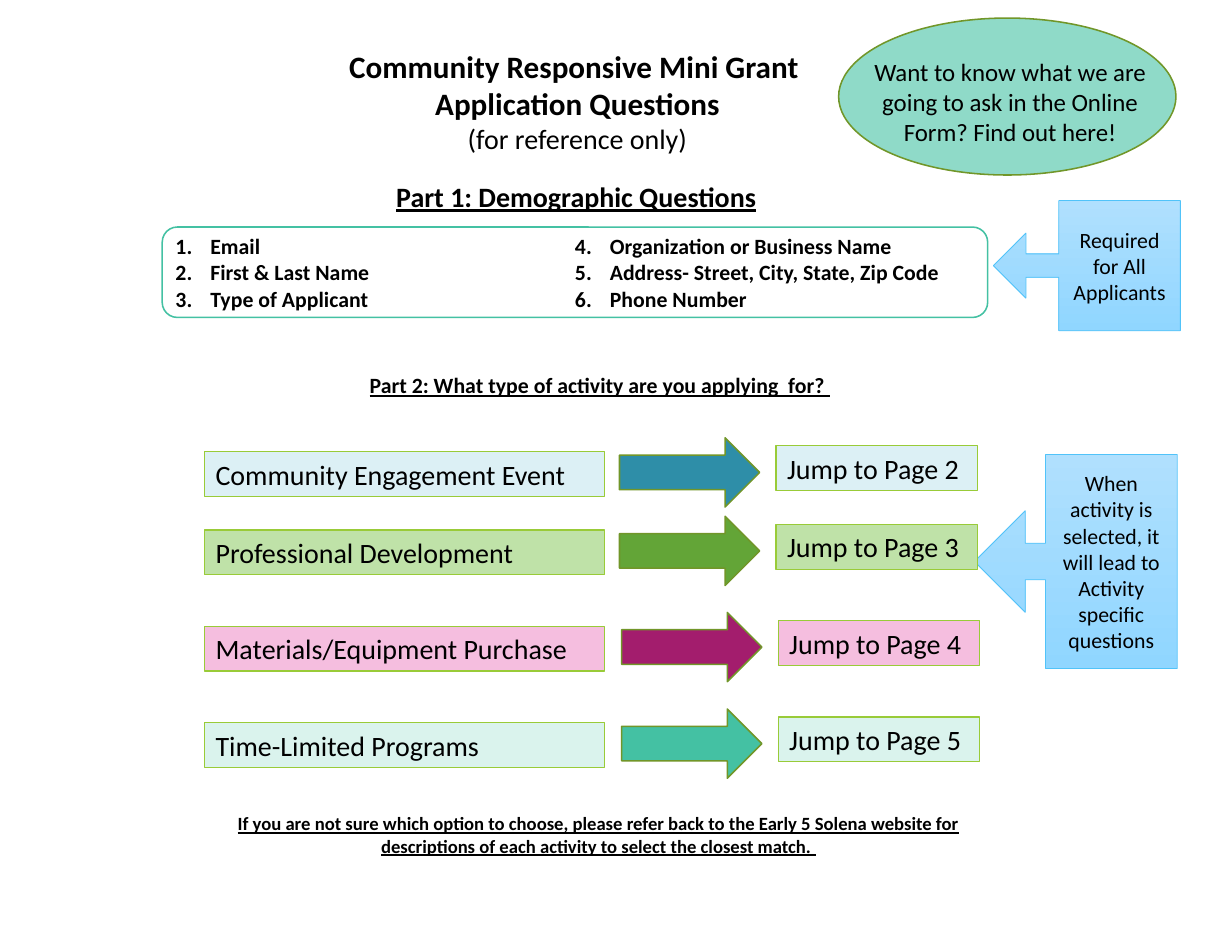
from lxml import etree
from pptx import Presentation
from pptx.dml.color import RGBColor
from pptx.enum import shapes, text
from pptx.oxml.ns import qn
from pptx.util import Cm, Pt

KIND = shapes.MSO_SHAPE
LEFT, CENTER = text.PP_ALIGN.LEFT, text.PP_ALIGN.CENTER
TOP, MIDDLE = text.MSO_ANCHOR.TOP, text.MSO_ANCHOR.MIDDLE

# Content: (text, font format) for each line
TITLE = [
    ("Community Responsive Mini Grant ", dict(size=Pt(20), bold=True)),
    ("Application Questions", dict(size=Pt(20), bold=True)),
    ("(for reference only)", dict(size=Pt(18), bold=False)),
]
QUESTIONS = [
    "Email", "First & Last Name", "Type of Applicant",
    "Organization or Business Name",
    "Address- Street, City, State, Zip Code", "Phone Number",
]
# Headings: text, size, (left, top, width, height) in cm
HEADINGS = [
    ("Part 1: Demographic Questions", 18, (8.64, 3.94, 8.86, 1.02)),
    ("Part 2: What type of activity are you applying  for? ", 14,
     (4.65, 8.31, 17.91, 0.86)),
    ("If you are not sure which option to choose, please refer back to the "
     "Early 5 Solena website for descriptions of each activity to select "
     "the closest match. ", 12, (4.62, 18.29, 17.91, 1.27)),
]
CALLOUTS = [
    ("When activity is selected, it will lead to Activity specific questions",
     (22.1, 10.31, 4.6, 4.85)),
    ("Required for All Applicants", (22.53, 4.55, 4.24, 2.95)),
]
INVITATION = ("Want to know what we are going to ask in the Online Form? "
              "Find out here!")
# Activities: name, pale box colour, arrow colour, row top, row shift in cm
ACTIVITIES = [
    ("Community Engagement Event", "DCF0F5", "2E8EA8", 9.93, 0),
    ("Professional Development", "BFE2A8", "63A537", 11.71, 0),
    ("Materials/Equipment Purchase", "F5BEDF", "A31D6D", 13.89, 0.05),
    ("Time-Limited Programs", "DAF3ED", "44C1A3", 16.08, 0.05),
]


def colour(value):
    return RGBColor.from_string(value)


def place(item, area):
    for name, value in zip(("left", "top", "width", "height"), area):
        setattr(item, name, Cm(value))


def write(item, lines, align=CENTER, anchor=TOP):
    """Fill a shape with (text, font format) lines."""
    frame = item.text_frame
    frame.word_wrap = True
    frame.auto_size = text.MSO_AUTO_SIZE.NONE
    frame.vertical_anchor = anchor
    for number, (words, style) in enumerate(lines):
        para = frame.add_paragraph() if number else frame.paragraphs[0]
        para.alignment = align
        para.space_before = Pt(0)
        span = para.add_run()
        span.text = words
        span.font.color.rgb = colour("000000")
        for name, value in {"name": "Calibri", **style}.items():
            setattr(span.font, name, value)


def draw(page, kind, area, fill, line, weight=1):
    box = page.shapes.add_shape(kind, *map(Cm, area))
    box.shadow.inherit = False
    if fill:
        box.fill.solid()
        box.fill.fore_color.rgb = colour(fill)
    else:
        box.fill.background()
    box.line.color.rgb = colour(line)
    box.line.width = Pt(weight)
    return box


def number_list(body):
    """Two columns of numbered paragraphs."""
    frame = body.text_frame
    frame.margin_left = frame.margin_right = Cm(0.3)
    frame.margin_top = frame.margin_bottom = Cm(0.08)
    columns = frame.paragraphs[0]._p.getparent().find(qn("a:bodyPr"))
    columns.set("numCol", "2")
    for para in frame.paragraphs:
        props = para._p.get_or_add_pPr()
        props.set("marL", str(Cm(0.79)))
        props.set("indent", str(Cm(-0.79)))
        etree.SubElement(props, qn("a:buFont"), typeface="+mj-lt")
        etree.SubElement(props, qn("a:buAutoNum"), type="arabicPeriod")


def main():
    deck = Presentation()
    deck.slide_width, deck.slide_height = Cm(27.94), Cm(21.59)
    page = deck.slides.add_slide(deck.slide_layouts[1])
    title, body = page.placeholders

    # Title and demographic questions
    place(title, (6.81, 0.94, 12.57, 2.74))
    write(title, TITLE)
    question_area = (3.68, 5.15, 18.72, 2.05)
    draw(page, KIND.ROUNDED_RECTANGLE, question_area, None, "44C1A3")
    place(body, question_area)
    write(body, [(words, dict(size=Pt(14), bold=True)) for words in QUESTIONS],
          LEFT, MIDDLE)
    number_list(body)

    # Underlined headings and closing note
    for words, size, area in HEADINGS:
        box = page.shapes.add_textbox(*map(Cm, area))
        write(box, [(words, dict(size=Pt(size), bold=True, underline=True))])

    # Arrow callouts on the right
    for words, area in CALLOUTS:
        box = draw(page, KIND.LEFT_ARROW_CALLOUT, area, None, "51C3F9", 0.5)
        for index, value in enumerate((0.18, 0.25, 0.25, 0.65)):
            box.adjustments[index] = value
        box.fill.gradient()
        box.fill.gradient_angle = 270
        for stop, shade in zip(box.fill.gradient_stops, ("B0E0FE", "90D6FF")):
            stop.color.rgb = colour(shade)
        write(box, [(words, dict(size=Pt(14)))], anchor=MIDDLE)

    # Activity rows: name, arrow, page to jump to
    for number, (name, pale, strong, top, shift) in enumerate(ACTIVITIES, 2):
        draw(page, KIND.RIGHT_ARROW, (14.05 + shift, top, 3.18, 1.57),
             strong, "719629")
        for words, left, drop, width in (
                (name, 4.64, 0.31, 9.07),
                (f"Jump to Page {number}", 17.6 + shift, 0.18, 4.57)):
            box = draw(page, KIND.RECTANGLE, (left, top + drop, width, 1.02),
                       pale, "99CB38", 0.75)
            write(box, [(words, dict(size=Pt(18)))], LEFT, MIDDLE)

    # Invitation bubble
    draw(page, KIND.OVAL, (19.02, 0.41, 7.65, 3.56), "8FDAC8", "719629")
    box = page.shapes.add_textbox(*map(Cm, (19.38, 1.17, 7.06, 2.31)))
    write(box, [(INVITATION, dict(size=Pt(16)))])

    deck.save("out.pptx")


if __name__ == "__main__":
    main()
